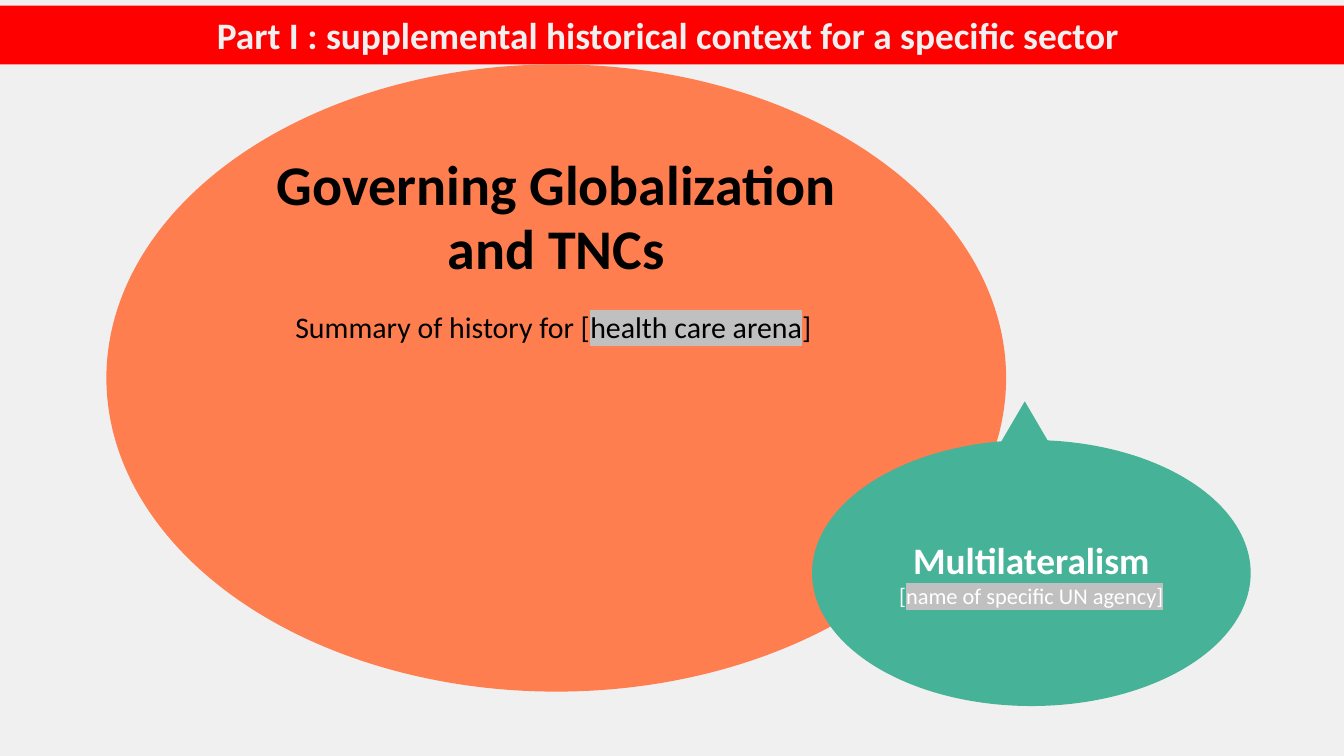
from lxml import etree
from pptx import Presentation
from pptx.dml.color import RGBColor
from pptx.enum.shapes import MSO_SHAPE
from pptx.enum.text import MSO_ANCHOR, PP_ALIGN
from pptx.oxml.ns import qn
from pptx.util import Pt

OVAL, TRIANGLE = MSO_SHAPE.OVAL, MSO_SHAPE.ISOSCELES_TRIANGLE
MIDDLE, CENTER = MSO_ANCHOR.MIDDLE, PP_ALIGN.CENTER

PALE = RGBColor(0xF0, 0xF0, 0xF0)
RED = RGBColor(0xFF, 0x00, 0x00)
CORAL = RGBColor(0xFF, 0x7E, 0x50)
TEAL = RGBColor(0x46, 0xB2, 0x98)
BLACK = RGBColor(0x00, 0x00, 0x00)
WHITE = RGBColor(0xFF, 0xFF, 0xFF)
HIGHLIGHT = "C0C0C0"


def add_shape(shapes, kind, box, color):
    sp = shapes.add_shape(kind, *map(Pt, box))
    sp.shadow.inherit = False
    sp.fill.solid()
    sp.fill.fore_color.rgb = color
    sp.line.fill.background()
    return sp


def write(p, runs, size, color, bold=False):
    """Fill a centred paragraph with (text, highlighted) runs."""
    p.alignment = CENTER
    p.font.name, p.font.size, p.font.bold = "Calibri", Pt(size), bold
    p.font.color.rgb = color
    for text, highlighted in runs:
        r = p.add_run()
        r.text = text
        if highlighted:
            mark = etree.SubElement(r.font._element, qn("a:highlight"))
            etree.SubElement(mark, qn("a:srgbClr"), val=HIGHLIGHT)


prs = Presentation()
prs.slide_width, prs.slide_height = Pt(1440), Pt(810)
s = prs.slides.add_slide(prs.slide_layouts[5])
s.background.fill.solid()
s.background.fill.fore_color.rgb = PALE

# Banner title
title = s.shapes.title
title.left, title.top, title.width, title.height = Pt(0), Pt(6), Pt(1440), Pt(63)
title.fill.solid()
title.fill.fore_color.rgb = RED
tf = title.text_frame
tf.vertical_anchor = MIDDLE
write(tf.paragraphs[0],
      [("Part I : supplemental historical context for a specific sector ", False)],
      40, PALE, bold=True)

# Main ellipse
add_shape(s.shapes, OVAL, (114, 69, 964, 672), CORAL)

# Summary line
tf = s.shapes.add_textbox(Pt(263), Pt(327), Pt(667), Pt(85)).text_frame
tf.word_wrap = True
write(tf.paragraphs[0],
      [("Summary of history for [", False), ("health care arena", True), ("] ", False)],
      32, BLACK)

# Multilateralism bubble with its pointer
bubble = s.shapes.add_group_shape()
add_shape(bubble.shapes, TRIANGLE, (1063.5, 430, 69, 59), TEAL)
sp = add_shape(bubble.shapes, OVAL, (870, 471.5, 470, 285), TEAL)
tf = sp.text_frame
tf.vertical_anchor = MIDDLE
write(tf.paragraphs[0], [("Multilateralism", False)], 40, WHITE, bold=True)
write(tf.add_paragraph(),
      [("[", False), ("name of specific UN agency]", True)], 24, WHITE)

# Main heading
tf = s.shapes.add_textbox(Pt(236), Pt(161), Pt(720), Pt(145)).text_frame
tf.word_wrap = True
for i, line in enumerate(["Governing Globalization", "and TNCs"]):
    p = tf.add_paragraph() if i else tf.paragraphs[0]
    p.line_spacing = Pt(68)
    write(p, [(line, False)], 60, BLACK, bold=True)

prs.save("out.pptx")
